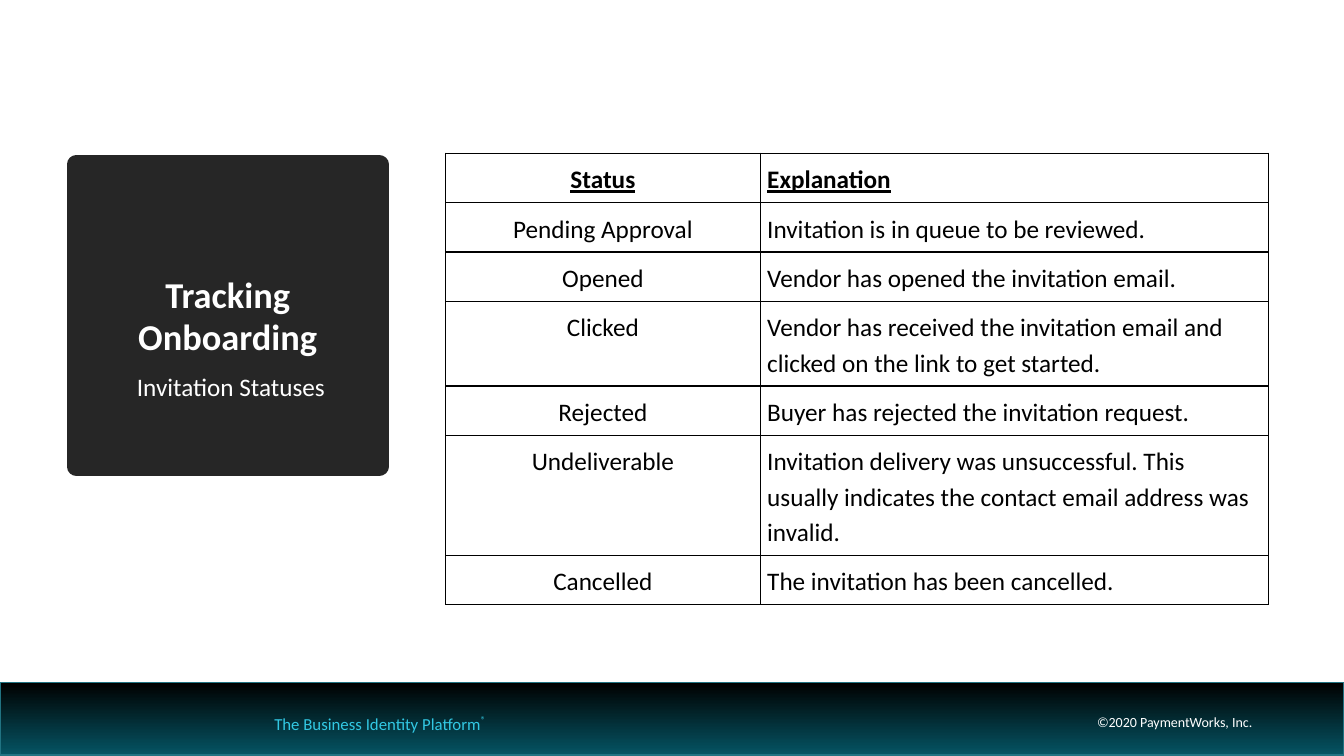
"""Build the invitation status slide with its table and footer band."""
from lxml import etree
from pptx import Presentation
from pptx import util as u
from pptx.dml import color
from pptx.enum import shapes, text
from pptx.oxml import ns

TITLE = "Tracking Onboarding"
SUBTITLE = "Invitation Statuses"
TAGLINE = "The Business Identity Platform"
COPYRIGHT = "©2020 PaymentWorks, Inc."
STATUSES = [
    ("Status", "Explanation", 1),
    ("Pending Approval", "Invitation is in queue to be reviewed.", 1),
    ("Opened", "Vendor has opened the invitation email.", 1),
    ("Clicked", "Vendor has received the invitation email and clicked on the link to get started.", 2),
    ("Rejected", "Buyer has rejected the invitation request.", 1),
    ("Undeliverable", "Invitation delivery was unsuccessful. This usually indicates "
     "the contact email address was invalid.", 3),
    ("Cancelled", "The invitation has been cancelled.", 1),
]
COLUMN_WIDTHS = (3.12, 5.04)
CELL_MARGIN, LINE_HEIGHT = 0.07, 0.35
BLACK, WHITE, CHARCOAL, CYAN = "000000", "FFFFFF", "262626", "32C8E3"
TEAL, TEAL_EDGE = "055463", "217382"


def rgb(value):
    return color.RGBColor.from_string(value)


def box(*lengths):
    return [u.Inches(length) for length in lengths]


def style(paragraph, size, ink, bold=False):
    font = paragraph.font
    font.name, font.size, font.bold = "Calibri", u.Pt(size), bold
    font.color.rgb = rgb(ink)


def add_text(slide, words, place, size, ink, margin=None, wrap=True):
    frame = slide.shapes.add_textbox(*box(*place)).text_frame
    frame.word_wrap = wrap
    if margin is not None:
        frame.margin_left = frame.margin_right = u.Inches(margin)
        frame.margin_top = frame.margin_bottom = u.Inches(margin)
    paragraph = frame.paragraphs[0]
    paragraph.text = words
    return paragraph, size, ink


def add_footer(slide):
    band = slide.shapes.add_shape(shapes.MSO_SHAPE.RECTANGLE, *box(0, 6.77, 13.33, 0.72))
    band.shadow.inherit = False
    band.fill.gradient()
    band.fill.gradient_angle = 270
    for stop, ink, position in zip(band.fill.gradient_stops, (BLACK, TEAL), (0, 1)):
        stop.color.rgb = rgb(ink)
        stop.position = position
    band.line.color.rgb = rgb(TEAL_EDGE)
    band.line.width = u.Pt(1)

    tagline, *look = add_text(slide, TAGLINE, (2.72, 7.08, 3.81, 0.2), 12, CYAN, 0)
    mark = tagline.add_run()
    mark.text = "®"
    mark.font._element.set("baseline", "40000")
    style(tagline, *look)

    notice, *look = add_text(slide, COPYRIGHT, (10.84, 7.08, 1.58, 0.17), 10, WHITE, 0, False)
    notice.alignment = text.PP_ALIGN.RIGHT
    style(notice, *look)


def add_heading(slide):
    title = slide.shapes.title
    title.left, title.top, title.width, title.height = box(0.76, 1.63, 3, 3)
    title.fill.solid()
    title.fill.fore_color.rgb = rgb(CHARCOAL)
    title.line.color.rgb = rgb(CHARCOAL)
    title.line.width = u.Pt(13.75)
    frame = title.text_frame
    frame.text = TITLE
    frame.auto_size = text.MSO_AUTO_SIZE.NONE
    frame.vertical_anchor = text.MSO_ANCHOR.MIDDLE
    paragraph = frame.paragraphs[0]
    paragraph.alignment = text.PP_ALIGN.CENTER
    paragraph.line_spacing = u.Pt(30)
    style(paragraph, 26, WHITE, True)

    subtitle, *look = add_text(slide, SUBTITLE, (1.2, 3.67, 2.36, 0.6), 18, WHITE)
    subtitle.line_spacing = 0.9
    subtitle.space_after = u.Pt(6)
    subtitle._p.get_or_add_pPr().set("marL", str(u.Inches(0.06)))
    style(subtitle, *look)


def add_borders(cell):
    properties = cell._tc.get_or_add_tcPr()
    for index, side in enumerate(("lnL", "lnR", "lnT", "lnB")):
        line = etree.Element(ns.qn("a:" + side), w=str(u.Pt(1)))
        fill = etree.SubElement(line, ns.qn("a:solidFill"))
        etree.SubElement(fill, ns.qn("a:srgbClr"), val=BLACK)
        properties.insert(index, line)


def add_statuses(slide):
    heights = [2 * CELL_MARGIN + LINE_HEIGHT * lines for *_, lines in STATUSES]
    place = box(4.42, 1.52, sum(COLUMN_WIDTHS), sum(heights))
    table = slide.shapes.add_table(len(STATUSES), len(COLUMN_WIDTHS), *place).table
    table.first_row = table.horz_banding = False
    for column, width in zip(table.columns, COLUMN_WIDTHS):
        column.width = u.Inches(width)
    for row_index, (*words, _) in enumerate(STATUSES):
        table.rows[row_index].height = u.Inches(heights[row_index])
        for column_index, entry in enumerate(words):
            cell = table.cell(row_index, column_index)
            cell.margin_left = cell.margin_right = u.Inches(CELL_MARGIN)
            cell.margin_top = cell.margin_bottom = u.Inches(CELL_MARGIN)
            cell.fill.background()
            add_borders(cell)
            paragraph = cell.text_frame.paragraphs[0]
            paragraph.text = entry
            paragraph.line_spacing = 1.15
            paragraph.alignment = (text.PP_ALIGN.LEFT if column_index else text.PP_ALIGN.CENTER)
            style(paragraph, 18, BLACK, row_index == 0)
            paragraph.font.underline = row_index == 0


def main():
    presentation = Presentation()
    presentation.slide_width, presentation.slide_height = box(13.33, 7.5)
    slide = presentation.slides.add_slide(presentation.slide_layouts.get_by_name("Title Only"))
    add_footer(slide)
    add_heading(slide)
    add_statuses(slide)
    presentation.save("out.pptx")


if __name__ == "__main__":
    main()
